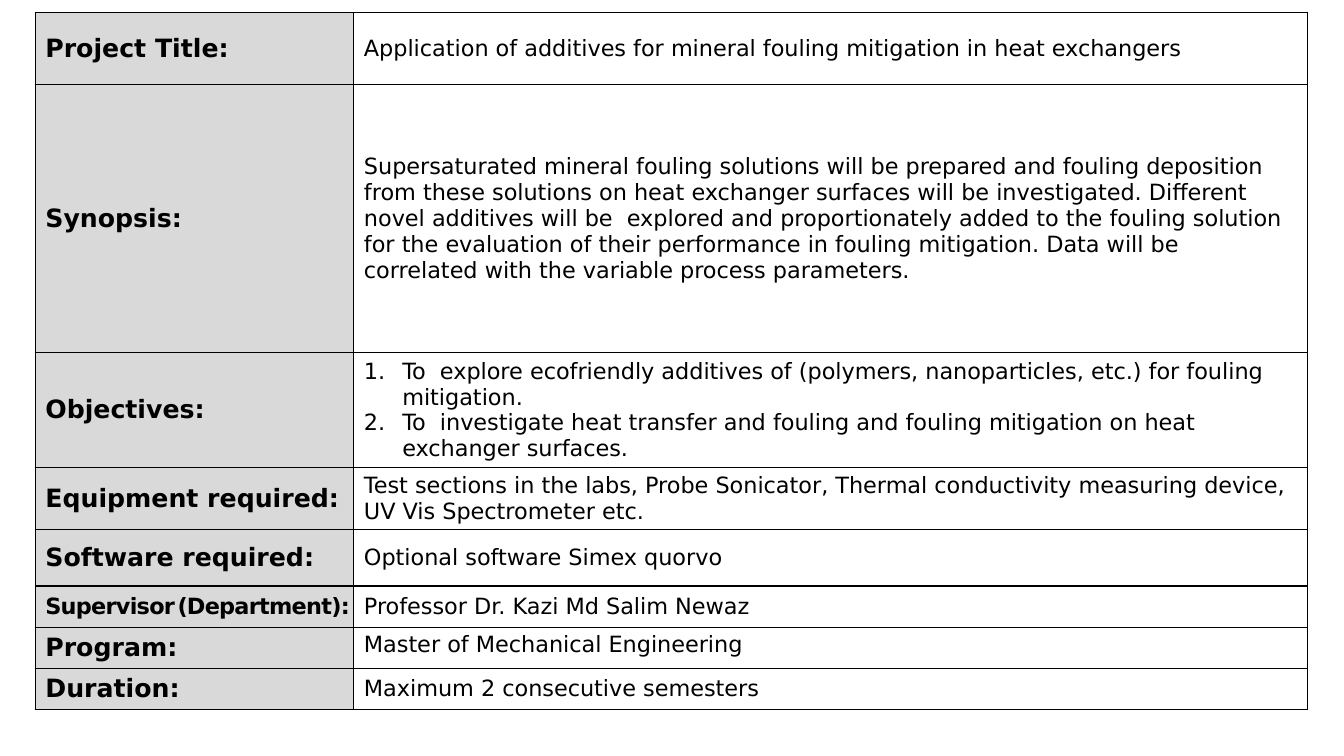
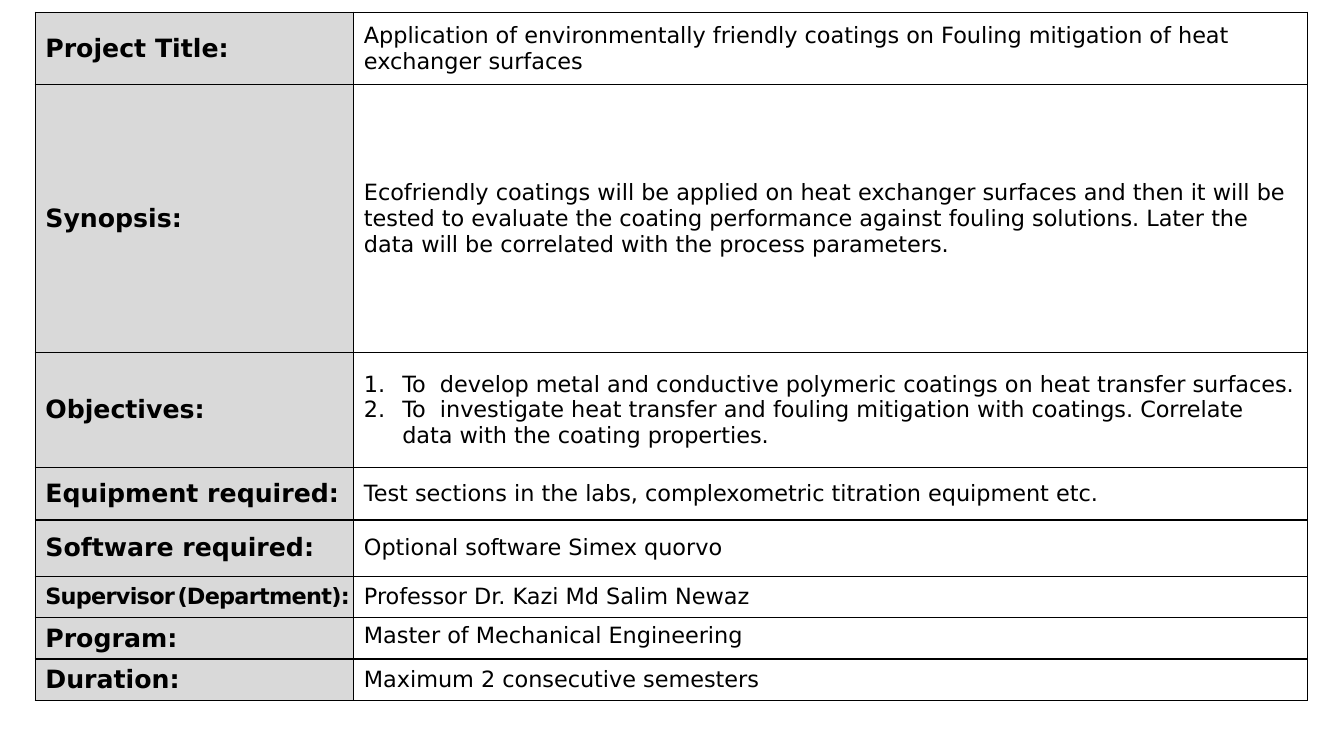
from dataclasses import dataclass

from lxml import etree
from pptx import Presentation
from pptx.dml.color import RGBColor
from pptx.enum import text
from pptx.oxml import ns
from pptx.util import Inches, Pt


@dataclass(frozen=True)
class Theme:
    font: str = "DejaVu Sans"
    ink: str = "000000"
    label_fill: str = "D9D9D9"
    value_fill: str = "FFFFFF"
    label_size: float = 18
    value_size: float = 16
    gap_size: float = 5
    border_width: float = 1
    tracking: float = -0.5
    number_indent: float = 0.38


@dataclass(frozen=True)
class TextRun:
    words: str
    size: float
    bold: bool = False
    tracking: float = 0


@dataclass(frozen=True)
class Project:
    title: str
    synopsis: str
    objectives: tuple[str, ...]
    equipment: str


@dataclass(frozen=True)
class Row:
    label: tuple[TextRun, ...]
    height: float
    values: tuple[str, ...]
    numbered: bool = False
    value_anchor: text.MSO_ANCHOR = text.MSO_ANCHOR.MIDDLE
    label_right_margin: float = 0.1


THEME = Theme()
TABLE_LEFT, TABLE_TOP = 0.35, 0.12
COLUMN_WIDTHS = (3.16, 9.46)

PROJECTS = (
    Project(
        "Application of additives for mineral fouling mitigation in heat exchangers",
        "Supersaturated mineral fouling solutions will be prepared and fouling deposition from these "
        "solutions on heat exchanger surfaces will be investigated. Different novel additives will be  "
        "explored and proportionately added to the fouling solution for the evaluation of their "
        "performance in fouling mitigation. Data will be correlated with the variable process parameters.",
        (
            "To  explore ecofriendly additives of (polymers, nanoparticles, etc.) for fouling mitigation.",
            "To  investigate heat transfer and fouling and fouling mitigation on heat exchanger surfaces.",
        ),
        "Test sections in the labs, Probe Sonicator, Thermal conductivity measuring device, "
        "UV Vis Spectrometer etc.",
    ),
    Project(
        "Application of environmentally friendly coatings on Fouling mitigation of heat exchanger surfaces",
        "Ecofriendly coatings will be applied on heat exchanger surfaces and then it will be tested to "
        "evaluate the coating performance against fouling solutions. Later the data will be correlated "
        "with the process parameters.",
        (
            "To  develop metal and conductive polymeric coatings on heat transfer surfaces.",
            "To  investigate heat transfer and fouling mitigation with coatings. Correlate data with "
            "the coating properties.",
        ),
        "Test sections in the labs, complexometric titration equipment etc.",
    ),
)


def label(words: str) -> tuple[TextRun, ...]:
    return (TextRun(words, THEME.label_size, bold=True),)


def supervisor_label() -> tuple[TextRun, ...]:
    """Tightened so that the long label stays on one line."""
    parts = (("Supervisor", THEME.value_size), (" ", THEME.gap_size), ("(Department):", THEME.value_size))
    return tuple(TextRun(words, size, True, THEME.tracking) for words, size in parts)


def project_rows(project: Project) -> tuple[Row, ...]:
    return (
        Row(label("Project Title:"), 0.72, (project.title,)),
        Row(label("Synopsis:"), 2.66, (project.synopsis,)),
        Row(label("Objectives:"), 1.14, project.objectives, numbered=True),
        Row(label("Equipment required:"), 0.52, (project.equipment,)),
        Row(label("Software required:"), 0.56, ("Optional software Simex quorvo",)),
        Row(supervisor_label(), 0.41, ("Professor Dr. Kazi Md Salim Newaz",), label_right_margin=0),
        Row(label("Program:"), 0.41, ("Master of Mechanical Engineering",),
            value_anchor=text.MSO_ANCHOR.TOP),
        Row(label("Duration:"), 0.41, ("Maximum 2 consecutive semesters",)),
    )


def add_run(paragraph, text_run: TextRun) -> None:
    run = paragraph.add_run()
    run.text = text_run.words
    run.font.name = THEME.font
    run.font.size = Pt(text_run.size)
    run.font.bold = text_run.bold
    run.font.color.rgb = RGBColor.from_string(THEME.ink)
    if text_run.tracking:
        run.font._element.set("spc", str(round(text_run.tracking * 100)))


def number_paragraph(paragraph) -> None:
    properties = paragraph._p.get_or_add_pPr()
    indent = Inches(THEME.number_indent)
    properties.set("marL", str(indent))
    properties.set("indent", str(-indent))
    etree.SubElement(properties, ns.qn("a:buAutoNum"), type="arabicPeriod")


def style_cell(cell, fill: str, anchor: text.MSO_ANCHOR) -> None:
    """Fill the cell and rule all four of its edges."""
    cell.vertical_anchor = anchor
    cell.fill.solid()
    cell.fill.fore_color.rgb = RGBColor.from_string(fill)
    properties = cell._tc.get_or_add_tcPr()
    for index, edge in enumerate(("a:lnL", "a:lnR", "a:lnT", "a:lnB")):
        line = etree.Element(ns.qn(edge), w=str(Pt(THEME.border_width)))
        line_fill = etree.SubElement(line, ns.qn("a:solidFill"))
        etree.SubElement(line_fill, ns.qn("a:srgbClr"), val=THEME.ink)
        properties.insert(index, line)


def fill_label(cell, row: Row) -> None:
    style_cell(cell, THEME.label_fill, text.MSO_ANCHOR.MIDDLE)
    cell.margin_right = Inches(row.label_right_margin)
    for text_run in row.label:
        add_run(cell.text_frame.paragraphs[0], text_run)


def fill_value(cell, row: Row) -> None:
    style_cell(cell, THEME.value_fill, row.value_anchor)
    frame = cell.text_frame
    for index, words in enumerate(row.values):
        paragraph = frame.add_paragraph() if index else frame.paragraphs[0]
        if row.numbered:
            number_paragraph(paragraph)
        add_run(paragraph, TextRun(words, THEME.value_size))


def add_project_slide(presentation, project: Project) -> None:
    blank_layout = presentation.slide_layouts[6]
    slide = presentation.slides.add_slide(blank_layout)
    rows = project_rows(project)
    table = slide.shapes.add_table(
        len(rows), len(COLUMN_WIDTHS), Inches(TABLE_LEFT), Inches(TABLE_TOP),
        Inches(sum(COLUMN_WIDTHS)), Inches(sum(row.height for row in rows)),
    ).table
    table.first_row = table.horz_banding = False
    for column, width in zip(table.columns, COLUMN_WIDTHS):
        column.width = Inches(width)
    for index, row in enumerate(rows):
        table.rows[index].height = Inches(row.height)
        fill_label(table.cell(index, 0), row)
        fill_value(table.cell(index, 1), row)


def main() -> None:
    presentation = Presentation()
    presentation.slide_width = Inches(13.33)
    presentation.slide_height = Inches(7.5)
    for project in PROJECTS:
        add_project_slide(presentation, project)
    presentation.save("out.pptx")


if __name__ == "__main__":
    main()
